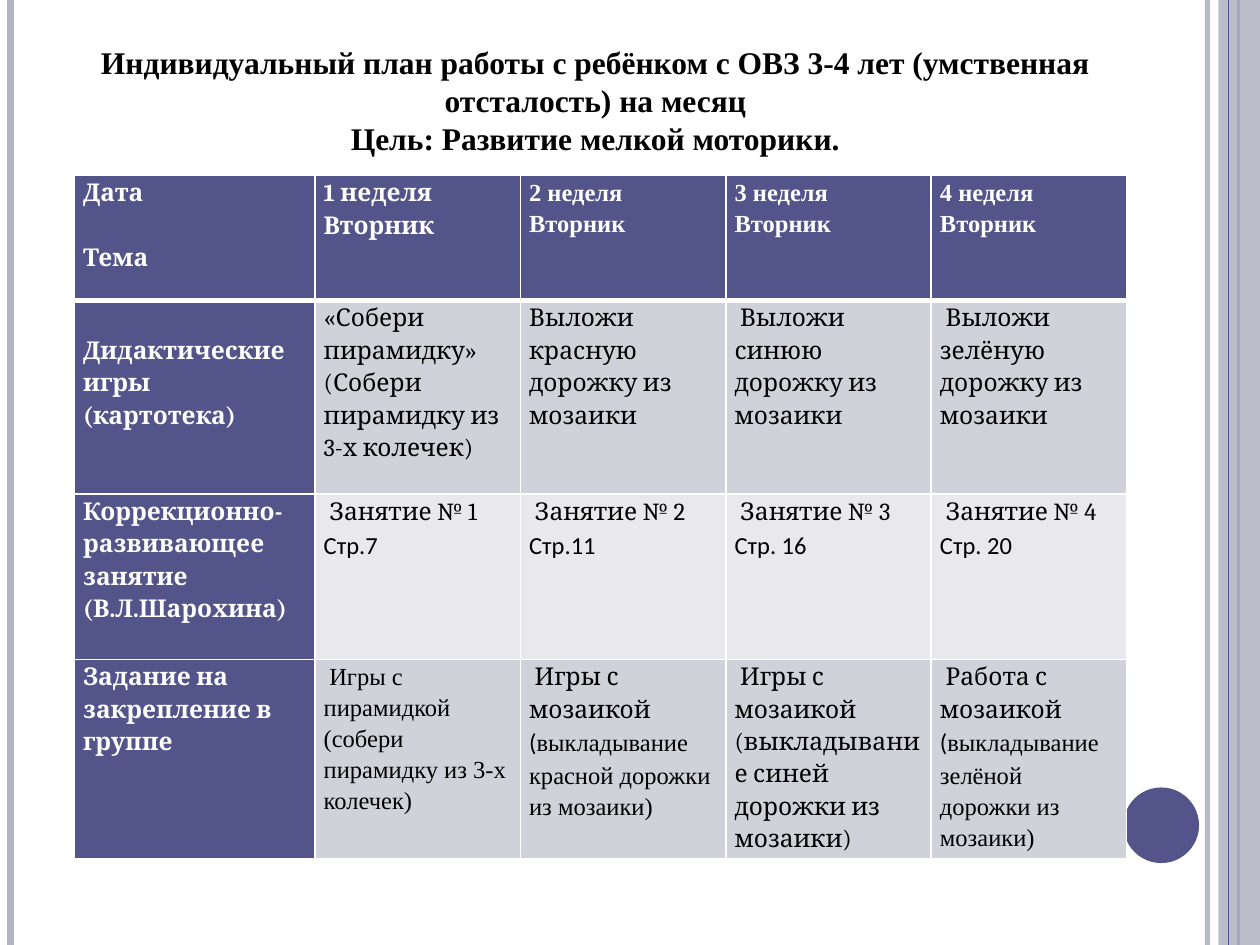
from pptx import Presentation
from pptx.dml.color import RGBColor
from pptx.enum.shapes import MSO_CONNECTOR as Link, MSO_SHAPE as Form
from pptx.enum.text import PP_ALIGN as Align
from pptx.oxml.ns import qn
from pptx.util import Pt
from lxml.etree import SubElement as Sub

WHITE = RGBColor(0xFF, 0xFF, 0xFF)
BLACK = RGBColor(0, 0, 0)
INDIGO = RGBColor(0x53, 0x54, 0x8A)
GREY = RGBColor(0xB3, 0xB4, 0xC4)
DARK = RGBColor(0xD1, 0xD1, 0xDA)
LIGHT = RGBColor(0xE9, 0xE9, 0xED)
ROMAN, SERIF, SANS = "Times New Roman", "Cambria", "Calibri"


def write(frame, paras, font=ROMAN, size=14, color=BLACK, bold=False,
          align=Align.LEFT, space=1.0, gap=0, indent=0):
    frame.word_wrap = True
    for i, text in enumerate(paras):
        para = frame.paragraphs[0] if i == 0 else frame.add_paragraph()
        para.alignment, para.line_spacing = align, space
        if i == 0 and indent:
            para._p.get_or_add_pPr().set("indent", str(Pt(indent)))
        if i and gap:
            para.space_before = Pt(gap)
        parts = [(font, text)] if isinstance(text, str) else text
        for face, words in parts:
            run = para.add_run()
            run.text = words
            run.font.name, run.font.size = face, Pt(size)
            run.font.bold, run.font.color.rgb = bold, color


def fade(fill, share):
    Sub(fill._xPr.find(qn("a:solidFill"))[0], qn("a:alpha"), val=str(share * 1000))


deck = Presentation()
deck.slide_width, deck.slide_height = Pt(720), Pt(540)
slide = deck.slides.add_slide(deck.slide_layouts[6])
shapes = slide.shapes

band = shapes.add_shape(Form.RECTANGLE, Pt(696.25), 0, Pt(23.75), Pt(540))
dot = shapes.add_shape(Form.OVAL, Pt(642), Pt(450), Pt(43.2), Pt(43.2))
for shape, color in ((band, GREY), (dot, INDIGO)):
    shape.shadow.inherit = False
    shape.fill.solid()
    shape.fill.fore_color.rgb = color
    shape.line.fill.background()
fade(band.fill, 87)

for x, width, color, share in ((690, 3, GREY, 93), (6, 4.5, GREY, 100),
                               (707.75, 1.5, INDIGO, 100), (702, 0.75, INDIGO, 100)):
    rule = shapes.add_connector(Link.STRAIGHT, Pt(x), 0, Pt(x), Pt(540))
    rule.line.width = Pt(width)
    rule.line.color.rgb = color
    if share < 100:
        fade(rule.line.fill, share)
    Sub(rule._element.spPr, qn("a:effectLst"))
    if color == INDIGO and width < 1:
        band._element.addnext(rule._element)
    else:
        band._element.addprevious(rule._element)

rows = [
    [(SERIF, "Дата", "Тема"),
     (SERIF, "1 неделя", "Вторник"),
     (ROMAN, "2 неделя Вторник"),
     (ROMAN, "3 неделя", "Вторник"),
     (ROMAN, "4 неделя Вторник")],
    [(SERIF, "Дидактические игры (картотека)"),
     (SERIF, "«Собери пирамидку»", "(Собери пирамидку из 3-х колечек)"),
     (SERIF, "Выложи красную дорожку из мозаики"),
     (SERIF, "Выложи", "синюю дорожку из мозаики"),
     (SERIF, "Выложи зелёную дорожку из мозаики")],
    [(SERIF, "Коррекционно-развивающее занятие", "(В.Л.Шарохина)")]
    + [(SERIF, f"Занятие № {n}", [(SANS, page)])
       for n, page in enumerate(("Стр.7", "Стр.11", "Стр. 16", "Стр. 20"), 1)],
    [(SERIF, "Задание на закрепление в группе"),
     (ROMAN, "Игры с пирамидкой", "(собери пирамидку из 3-х колечек)"),
     (SERIF, "Игры с мозаикой",
      [(SANS, "("), (ROMAN, "выкладывание красной дорожки из мозаики)")]),
     (SERIF, "Игры с мозаикой (выкладывание синей дорожки из мозаики)"),
     (SERIF, "Работа с мозаикой",
      [(SANS, "("), (ROMAN, "выкладывание зелёной дорожки из мозаики)")])],
]
flush = {(1, 1), (1, 2)}
wides = (137.5, 117.4, 117.4, 117.4, 111.6)
highs = (71.5, 110.5, 94.5, 114)

table = shapes.add_table(4, 5, Pt(42.5), Pt(100.3), Pt(sum(wides)), Pt(sum(highs))).table
table.first_col = True
for col, wide in zip(table.columns, wides):
    col.width = Pt(wide)
for row, high in zip(table.rows, highs):
    row.height = Pt(high)

for r, row in enumerate(rows):
    for c, (font, *paras) in enumerate(row):
        cell = table.cell(r, c)
        head = r == 0 or c == 0
        cell.margin_left = cell.margin_right = Pt(5)
        cell.margin_top = Pt(18.5 if (r, c) == (1, 0) else 0)
        cell.margin_bottom = 0
        write(cell.text_frame, paras, font=font, space=1.15, bold=head,
              color=WHITE if head else BLACK,
              gap=18.5 if r == c == 0 else 0,
              indent=0 if head or (r, c) in flush else 3.2)
        props = cell._tc.get_or_add_tcPr()
        for side in "LRTB":
            thick = (r, side) in ((0, "B"), (1, "T"))
            edge = Sub(props, qn(f"a:ln{side}"), w=str(Pt(3 if thick else 1)))
            Sub(Sub(edge, qn("a:solidFill")), qn("a:srgbClr"), val=str(WHITE))
        cell.fill.solid()
        cell.fill.fore_color.rgb = INDIGO if head else DARK if r % 2 else LIGHT

title = shapes.add_textbox(Pt(42.5), Pt(21), Pt(595.5), Pt(72.7))
write(title.text_frame,
      ("Индивидуальный план работы с ребёнком с ОВЗ 3-4 лет (умственная отсталость) на месяц",
       "Цель: Развитие мелкой моторики."),
      size=18, bold=True, align=Align.CENTER)

deck.save("out.pptx")
